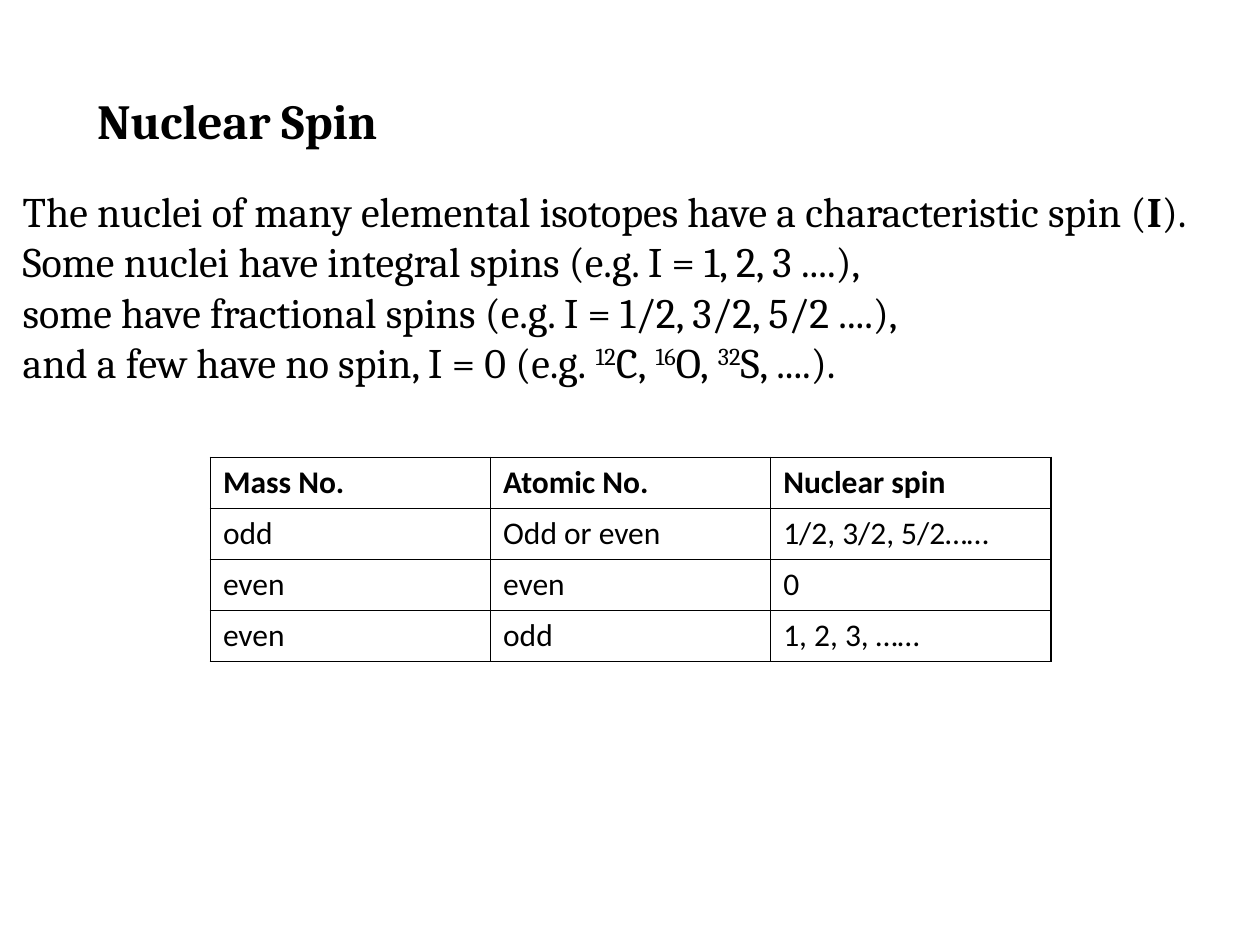
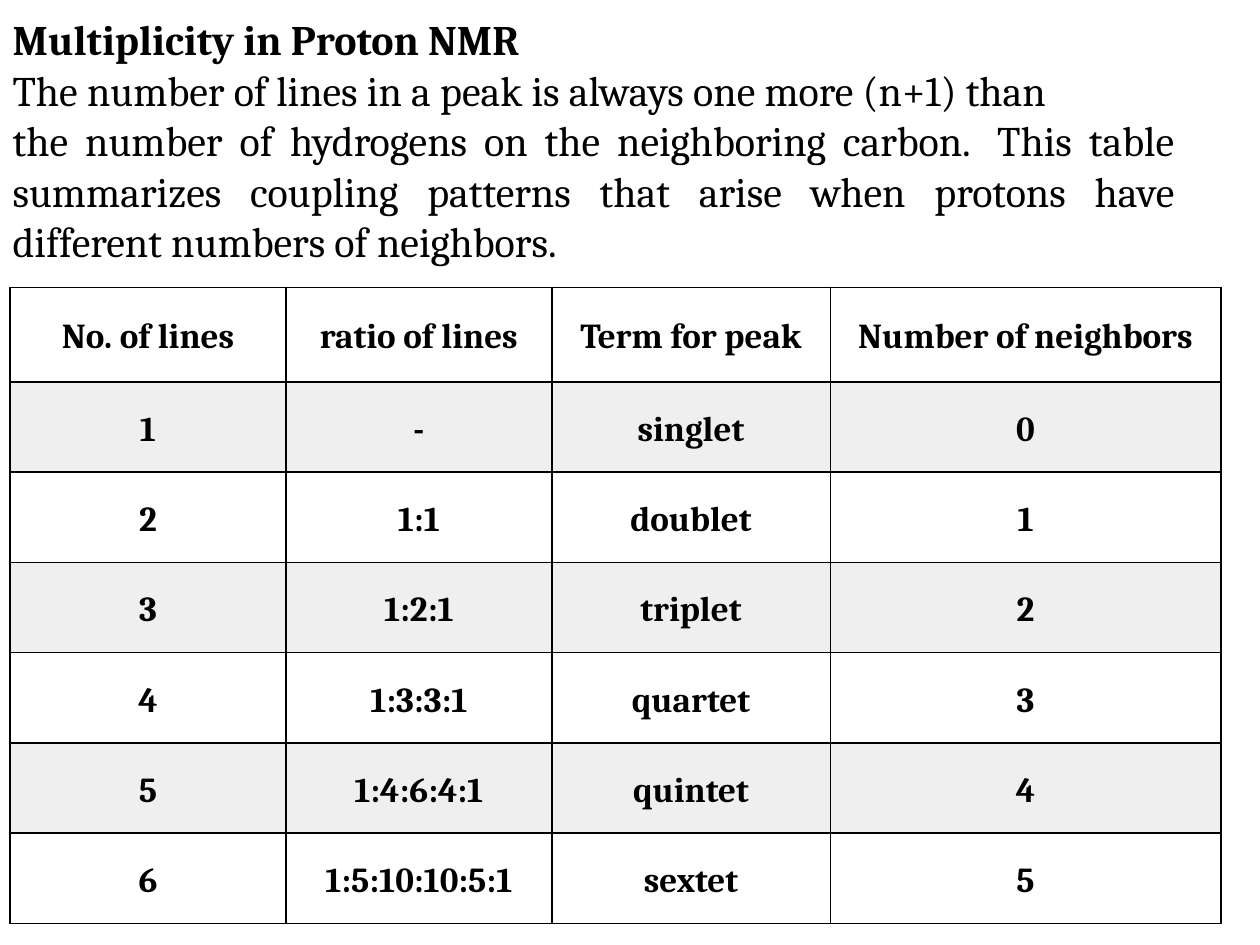
from lxml.etree import SubElement
from pptx import Presentation
from pptx.dml.color import RGBColor
from pptx.enum.text import MSO_ANCHOR as Anchor, MSO_AUTO_SIZE as AutoSize, PP_ALIGN as Align
from pptx.oxml.ns import qn
from pptx.util import Inches, Pt

BLACK, WHITE, BAND = "000000", "FFFFFF", "EFEFEF"
SERIF, SANS = "Cambria", "Calibri"
PLAIN, BOLD, SUPER = "plain", "bold", "super"
NBSP = chr(160)
TITLE_AND_CONTENT, TITLE_ONLY = 1, 5

SPIN_TITLE = [[("Nuclear Spin", BOLD)]]
SPIN_LINES = [
    [("The nuclei of many elemental isotopes have a characteristic spin (", PLAIN),
     ("I", BOLD), (").", PLAIN)],
    [("Some nuclei have integral spins (e.g. I = 1, 2, 3 ....),", PLAIN)],
    [("some have fractional spins (e.g. I = 1/2, 3/2, 5/2 ....),", PLAIN)],
    [(f"and a few have no spin, I = 0 (e.g.{NBSP}", PLAIN), ("12", SUPER), (f"C,{NBSP}", PLAIN),
     ("16", SUPER), (f"O,{NBSP}", PLAIN), ("32", SUPER), ("S, ....).", PLAIN)],
]
SPIN_ROWS = [
    ("Mass No.", "Atomic No.", "Nuclear spin"),
    ("odd", "Odd or even", "1/2, 3/2, 5/2……"),
    ("even", "even", "0"),
    ("even", "odd", "1, 2, 3, ……"),
]
MULTIPLICITY_LINES = [
    [("Multiplicity in Proton NMR", BOLD)],
    [("The number of lines in a peak is always one more (n+1) than ", PLAIN)],
    [(f"the number of hydrogens on the neighboring carbon.{NBSP} This table summarizes coupling "
      "patterns that arise when protons have different numbers of neighbors.", PLAIN)],
]
MULTIPLICITY_ROWS = [
    ("No. of lines", "ratio of lines", "Term for peak", "Number of neighbors"),
    ("1", "-", "singlet", "0"),
    ("2", "1:1", "doublet", "1"),
    ("3", "1:2:1", "triplet", "2"),
    ("4", "1:3:3:1", "quartet", "3"),
    ("5", "1:4:6:4:1", "quintet", "4"),
    ("6", "1:5:10:10:5:1", "sextet", "5"),
]


def rgb(value):
    """Turn a hex string into a colour."""
    return RGBColor.from_string(value)


def add_run(paragraph, text, size, face=SERIF, style=PLAIN):
    """Append one formatted run to a paragraph."""
    run = paragraph.add_run()
    run.text = text
    font = run.font
    font.name, font.size, font.bold = face, Pt(size), style == BOLD
    font.color.rgb = rgb(BLACK)
    if style == SUPER:
        run._r.get_or_add_rPr().set("baseline", "30000")


def fill_placeholder(holder, box, lines, size, align=Align.LEFT, anchor=Anchor.TOP):
    """Move a placeholder into its box and write unbulleted lines in it."""
    holder.left, holder.top, holder.width, holder.height = map(Inches, box)
    frame = holder.text_frame
    frame.word_wrap, frame.auto_size = True, AutoSize.NONE
    frame.vertical_anchor = anchor
    for index, runs in enumerate(lines):
        paragraph = frame.add_paragraph() if index else frame.paragraphs[0]
        paragraph.alignment = align
        paragraph.space_before = Pt(0)
        properties = paragraph._p.get_or_add_pPr()
        properties.set("marL", "0")
        properties.set("indent", "0")
        SubElement(properties, qn("a:buNone"))
        for text, style in runs:
            add_run(paragraph, text, size, style=style)


def add_borders(cell):
    """Draw a thin black line on all four sides of a cell."""
    properties = cell._tc.get_or_add_tcPr()
    for side in ("a:lnL", "a:lnR", "a:lnT", "a:lnB"):
        line = SubElement(properties, qn(side), w=str(Pt(1)))
        solid = SubElement(line, qn("a:solidFill"))
        SubElement(solid, qn("a:srgbClr"), val=BLACK)


def add_grid(slide, corner, widths, heights, rows, style_cell):
    """Add a bordered table and let style_cell write each cell."""
    left, top = corner
    table = slide.shapes.add_table(
        len(rows), len(widths), Inches(left), Inches(top),
        Inches(sum(widths)), Inches(sum(heights))).table
    for column, width in zip(table.columns, widths):
        column.width = Inches(width)
    for row, height in zip(table.rows, heights):
        row.height = Inches(height)
    for row_index, texts in enumerate(rows):
        for column_index, text in enumerate(texts):
            cell = table.cell(row_index, column_index)
            add_borders(cell)
            cell.fill.solid()
            style_cell(cell, text, row_index)


def style_spin_cell(cell, text, row_index):
    """Write a white cell, bold in the header row."""
    cell.fill.fore_color.rgb = rgb(WHITE)
    add_run(cell.text_frame.paragraphs[0], text, 18, SANS, PLAIN if row_index else BOLD)


def style_peak_cell(cell, text, row_index):
    """Write a centred bold cell with alternate rows shaded."""
    cell.fill.fore_color.rgb = rgb(BAND if row_index % 2 else WHITE)
    cell.vertical_anchor = Anchor.MIDDLE
    cell.margin_left = cell.margin_right = cell.margin_top = cell.margin_bottom = Inches(0.17)
    paragraph = cell.text_frame.paragraphs[0]
    paragraph.alignment, paragraph.line_spacing = Align.CENTER, 1.15
    add_run(paragraph, text, 20, style=BOLD)


def build_spin_slide(slide):
    """Explain nuclear spin and tabulate it by mass and atomic number."""
    fill_placeholder(slide.placeholders[1], (0.08, 1.42, 9.83, 3.74), SPIN_LINES, 24)
    fill_placeholder(slide.shapes.title, (0.67, 0.67, 6.33, 0.57), SPIN_TITLE, 28)
    add_grid(slide, (1.67, 3.63), [6.67 / 3] * 3, [1.62 / 4] * 4, SPIN_ROWS, style_spin_cell)


def build_multiplicity_slide(slide):
    """Explain the n+1 rule and tabulate the coupling patterns."""
    heading = slide.shapes.title
    heading.fill.solid()
    heading.fill.fore_color.rgb = rgb(WHITE)
    fill_placeholder(heading, (0, 0.05, 9.42, 2.12), MULTIPLICITY_LINES, 24,
                     Align.JUSTIFY, Anchor.MIDDLE)
    header, total = 0.75, 5.05
    add_grid(slide, (0.08, 2.28), [2.19, 2.11, 2.21, 3.1], [header] + [(total - header) / 6] * 6,
             MULTIPLICITY_ROWS, style_peak_cell)


def main():
    """Build both slides and save the file."""
    deck = Presentation()
    deck.slide_width, deck.slide_height = Inches(10), Inches(7.5)
    for build, layout in ((build_spin_slide, TITLE_AND_CONTENT),
                          (build_multiplicity_slide, TITLE_ONLY)):
        build(deck.slides.add_slide(deck.slide_layouts[layout]))
    deck.save("out.pptx")


if __name__ == "__main__":
    main()
